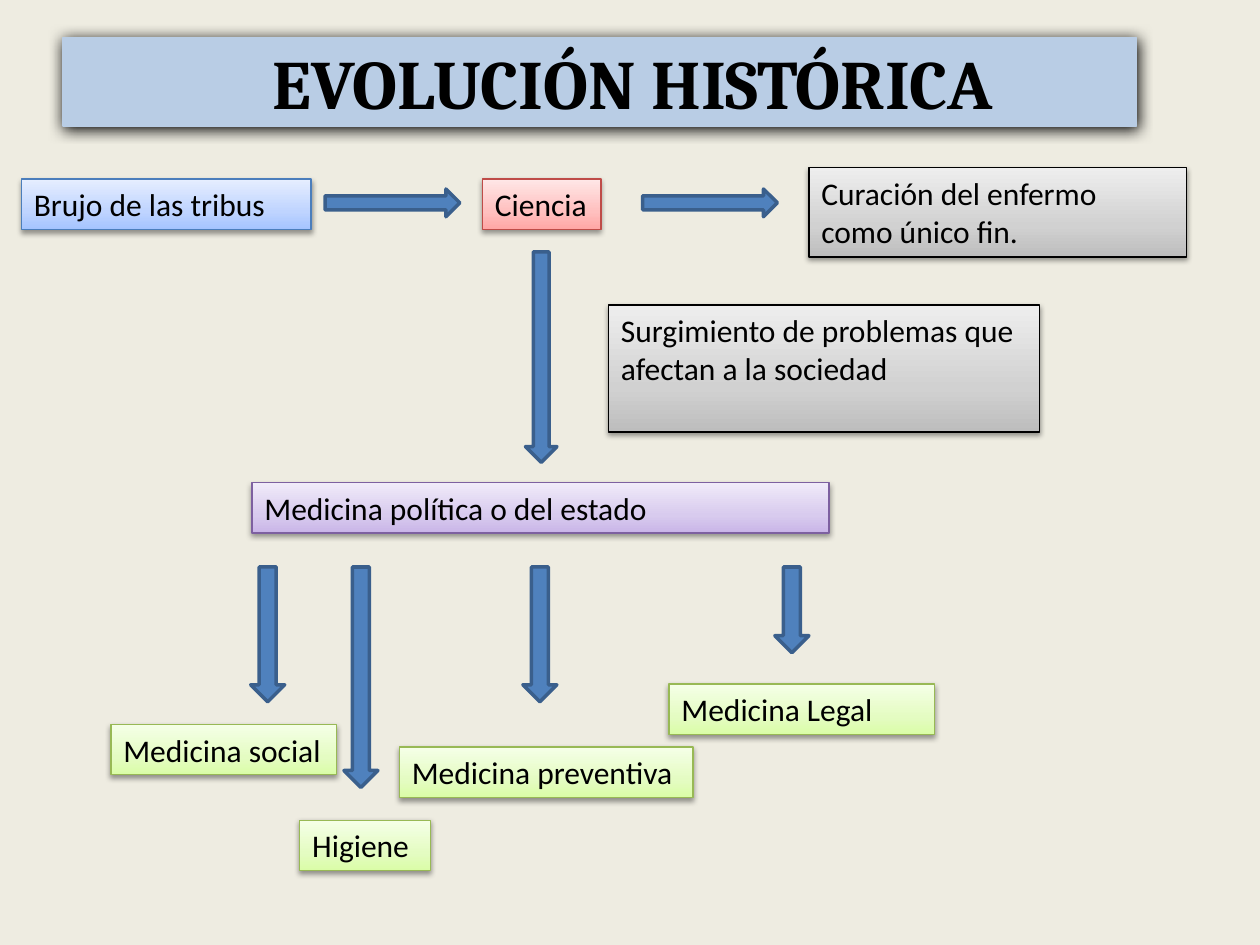
import copy

import pptx
import pptx.dml.color
import pptx.enum.shapes
import pptx.enum.text
import pptx.oxml
import pptx.oxml.ns
import pptx.util

Inches = pptx.util.Inches
Pt = pptx.util.Pt
RGBColor = pptx.dml.color.RGBColor
Shape = pptx.enum.shapes.MSO_SHAPE
AutoSize = pptx.enum.text.MSO_AUTO_SIZE
qn = pptx.oxml.ns.qn

BACKGROUND = RGBColor(0xEE, 0xEC, 0xE1)
BLACK = RGBColor(0, 0, 0)
BANNER = RGBColor(0xB9, 0xCD, 0xE5)
ARROW_FILL = RGBColor(0x4F, 0x81, 0xBD)
ARROW_LINE = RGBColor(0x3A, 0x5F, 0x8C)

# Each palette: outline, then gradient colours from bottom to top
BLUE = (RGBColor(0x4B, 0x7E, 0xBC), RGBColor(0xA4, 0xC4, 0xFF),
        RGBColor(0xBF, 0xD4, 0xFF), RGBColor(0xE6, 0xEE, 0xFF))
RED = (RGBColor(0xBF, 0x4C, 0x48), RGBColor(0xFF, 0xA6, 0xA5),
       RGBColor(0xFF, 0xC0, 0xBF), RGBColor(0xFF, 0xE7, 0xE7))
GREY = (BLACK, RGBColor(0xBD, 0xBD, 0xBD),
        RGBColor(0xD1, 0xD1, 0xD1), RGBColor(0xEE, 0xEE, 0xEE))
PURPLE = (RGBColor(0x7D, 0x60, 0xA0), RGBColor(0xC9, 0xB5, 0xE8),
          RGBColor(0xD8, 0xCB, 0xEE), RGBColor(0xF0, 0xEA, 0xF9))
GREEN = (RGBColor(0x98, 0xB9, 0x55), RGBColor(0xDA, 0xFD, 0xA7),
         RGBColor(0xE4, 0xFC, 0xC2), RGBColor(0xF5, 0xFF, 0xE7))
STOPS = (0, 0.35, 1)

ROW_HEIGHT = 0.4


class Diagram:
    def __init__(self, slide):
        self.slide = slide
        slide.background.fill.solid()
        slide.background.fill.fore_color.rgb = BACKGROUND

    def outline(self, shape, color, width):
        shape.line.color.rgb = color
        shape.line.width = Pt(width)

    def drop_shadow(self, shape, blur, distance, opacity):
        shape.shadow.inherit = False
        effects = shape._element.spPr.find(qn("a:effectLst"))
        effects.append(pptx.oxml.parse_xml(
            f'<a:outerShdw {pptx.oxml.ns.nsdecls("a")} blurRad="{Pt(blur)}" '
            f'dist="{Pt(distance)}" dir="5400000" rotWithShape="0">'
            f'<a:srgbClr val="{BLACK}"><a:alpha val="{opacity * 1000}"/>'
            '</a:srgbClr></a:outerShdw>'))

    def gradient(self, shape, colors):
        shape.fill.gradient()
        shape.fill.gradient_angle = 90
        stop_list = shape._element.spPr.find(qn("a:gradFill")).find(qn("a:gsLst"))
        stop_list.append(copy.deepcopy(stop_list[0]))
        for stop, position, color in zip(shape.fill.gradient_stops, STOPS, colors):
            stop.position = position
            stop.color.rgb = color

    def add_text(self, paragraph, text, font, size, bold=False):
        run = paragraph.add_run()
        run.text = text
        run.font.name = font
        run.font.size = Pt(size)
        run.font.bold = bold
        run.font.color.rgb = BLACK

    def title(self, text, left, top, width, height):
        banner = self.slide.shapes.title
        banner.left, banner.top = Inches(left), Inches(top)
        banner.width, banner.height = Inches(width), Inches(height)
        banner.fill.solid()
        banner.fill.fore_color.rgb = BANNER
        self.outline(banner, BANNER, 0.75)
        self.drop_shadow(banner, 8.5, 1, 100)
        frame = banner.text_frame
        frame.auto_size = AutoSize.NONE
        frame.vertical_anchor = pptx.enum.text.MSO_ANCHOR.MIDDLE
        heading = frame.paragraphs[0]
        heading.alignment = pptx.enum.text.PP_ALIGN.CENTER
        properties = heading._p.get_or_add_pPr()
        properties.set("marL", str(Inches(0.53)))
        properties.set("indent", "0")
        self.add_text(heading, text, "Cambria", 39.6, bold=True)

    def box(self, text, palette, left, top, width, height=ROW_HEIGHT):
        box = self.slide.shapes.add_textbox(
            Inches(left), Inches(top), Inches(width), Inches(height))
        line_color, *colors = palette
        self.gradient(box, colors)
        self.outline(box, line_color, 0.75)
        self.drop_shadow(box, 3.1, 1.6, 38)
        box.text_frame.word_wrap = " " in text
        box.text_frame.auto_size = AutoSize.NONE
        self.add_text(box.text_frame.paragraphs[0], text, "Calibri", 18)

    def arrow(self, kind, left, top, width, height):
        arrow = self.slide.shapes.add_shape(
            kind, Inches(left), Inches(top), Inches(width), Inches(height))
        arrow.shadow.inherit = False
        arrow.fill.solid()
        arrow.fill.fore_color.rgb = ARROW_FILL
        self.outline(arrow, ARROW_LINE, 2)


def main():
    presentation = pptx.Presentation()
    presentation.slide_width = Inches(10)
    presentation.slide_height = Inches(7.5)
    diagram = Diagram(presentation.slides.add_slide(presentation.slide_layouts[5]))

    diagram.title("EVOLUCIÓN HISTÓRICA", 0.5, 0.3, 8.52, 0.7)

    diagram.box("Brujo de las tribus", BLUE, 0.17, 1.42, 2.3)
    diagram.box("Ciencia", RED, 3.83, 1.42, 0.94)
    diagram.box("Curación del enfermo como único fin.", GREY, 6.42, 1.33, 3, 0.71)
    for left in (2.58, 5.1):
        diagram.arrow(Shape.RIGHT_ARROW, left, 1.5, 1.07, 0.22)

    diagram.arrow(Shape.DOWN_ARROW, 4.17, 2, 0.25, 1.67)
    diagram.box("Surgimiento de problemas que afectan a la sociedad",
                GREY, 4.83, 2.42, 3.42, 1.01)
    diagram.box("Medicina política o del estado", PURPLE, 2, 3.83, 4.58)

    for left, length in ((1.99, 1.07), (2.73, 1.75), (4.15, 1.07), (6.15, 0.68)):
        diagram.arrow(Shape.DOWN_ARROW, left, 4.5, 0.27, length)
    for branch, left, top, width in (
            ("Medicina social", 0.88, 5.75, 1.79),
            ("Higiene", 2.38, 6.51, 1.04),
            ("Medicina preventiva", 3.17, 5.93, 2.33),
            ("Medicina Legal", 5.31, 5.43, 2.11)):
        diagram.box(branch, GREEN, left, top, width)

    presentation.save("out.pptx")


if __name__ == "__main__":
    main()
